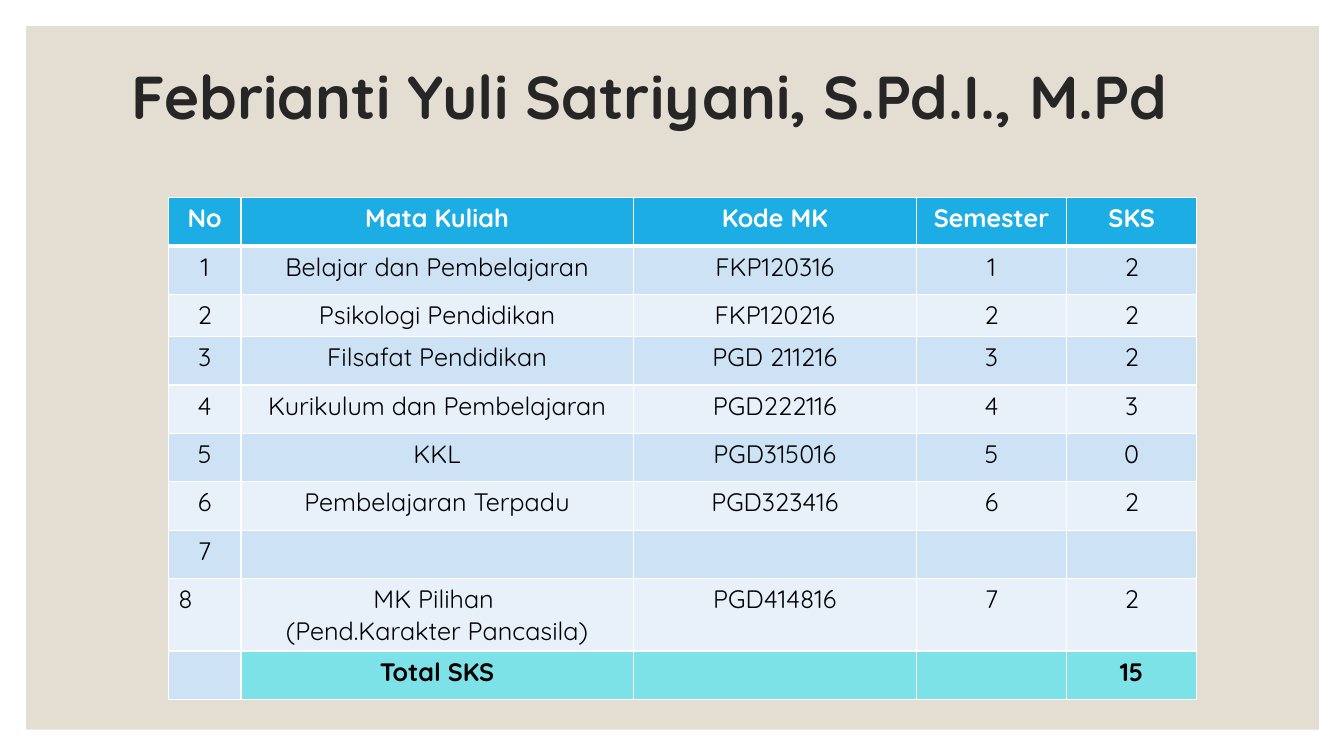
"""Build a slide listing a lecturer's courses with codes, semesters and credits."""
import lxml.etree
import pptx
import pptx.dml.color
import pptx.enum.shapes
import pptx.enum.text
import pptx.oxml.ns
import pptx.util

Inches = pptx.util.Inches
RGBColor = pptx.dml.color.RGBColor
ALIGN = pptx.enum.text.PP_ALIGN

FONT = "Quicksand"
SAND = RGBColor(0xE3, 0xDE, 0xD1)
CHARCOAL = RGBColor(0x26, 0x26, 0x26)
BLACK = RGBColor(0x00, 0x00, 0x00)
WHITE = RGBColor(0xFF, 0xFF, 0xFF)
HEADER_BLUE = RGBColor(0x1C, 0xAD, 0xE4)
BAND_DARK = RGBColor(0xCD, 0xE3, 0xF5)
BAND_LIGHT = RGBColor(0xE8, 0xF1, 0xFA)
TOTAL_TEAL = RGBColor(0x7D, 0xE2, 0xE7)

COURSES = [
    ("No", "Mata Kuliah", "Kode MK", "Semester", "SKS"),
    ("1", "Belajar dan Pembelajaran", "FKP120316", "1", "2"),
    ("2", "Psikologi Pendidikan", "FKP120216", "2", "2"),
    ("3", "Filsafat Pendidikan", "PGD 211216", "3", "2"),
    ("4", "Kurikulum dan Pembelajaran", "PGD222116", "4", "3"),
    ("5", "KKL", "PGD315016", "5", "0"),
    ("6", "Pembelajaran Terpadu", "PGD323416", "6", "2"),
    ("7", "", "", "", ""),
    ("8", "MK Pilihan \n(Pend.Karakter Pancasila)", "PGD414816", "7", "2"),
    ("", "Total SKS", "", "", "15"),
]
COLUMN_WIDTHS = [0.72, 3.89, 2.81, 1.49, 1.29]
ROW_HEIGHTS = [0.48, 0.48, 0.42, 0.48, 0.48, 0.48, 0.48, 0.48, 0.72, 0.48]
TOTAL_ROW = len(COURSES) - 1


def add_text(paragraph, text, size, color, bold, align=ALIGN.CENTER):
    paragraph.alignment = align
    run = paragraph.add_run()
    run.text = text
    run.font.name = FONT
    run.font.size = pptx.util.Pt(size)
    run.font.bold = bold
    run.font.color.rgb = color


def set_borders(cell, top, bottom):
    properties = cell._tc.get_or_add_tcPr()
    sides = [("lnL", 1), ("lnR", 1), ("lnT", top), ("lnB", bottom)]
    for position, (side, points) in enumerate(sides):
        line = lxml.etree.Element(pptx.oxml.ns.qn(f"a:{side}"), w=str(pptx.util.Pt(points)))
        fill = lxml.etree.SubElement(line, pptx.oxml.ns.qn("a:solidFill"))
        lxml.etree.SubElement(fill, pptx.oxml.ns.qn("a:srgbClr"), val=str(WHITE))
        properties.insert(position, line)


deck = pptx.Presentation()
deck.slide_width = Inches(13.33)
deck.slide_height = Inches(7.5)
slide = deck.slides.add_slide(deck.slide_layouts[6])

backdrop = slide.shapes.add_shape(
    pptx.enum.shapes.MSO_SHAPE.RECTANGLE, Inches(0.26), Inches(0.26), Inches(12.82), Inches(6.98))
backdrop.shadow.inherit = False
backdrop.fill.solid()
backdrop.fill.fore_color.rgb = SAND
backdrop.line.fill.background()

lecturer = slide.shapes.add_textbox(Inches(0.94), Inches(0.61), Inches(11), Inches(0.77)).text_frame
lecturer.word_wrap = True
lecturer.vertical_anchor = pptx.enum.text.MSO_ANCHOR.MIDDLE
lecturer.paragraphs[0].line_spacing = 0.9
add_text(lecturer.paragraphs[0], "Febrianti Yuli Satriyani, S.Pd.I., M.Pd", 43.2, CHARCOAL, True)

schedule = slide.shapes.add_table(
    len(COURSES), len(COLUMN_WIDTHS), Inches(1.67), Inches(1.96),
    Inches(sum(COLUMN_WIDTHS)), Inches(sum(ROW_HEIGHTS))).table
for column, width in zip(schedule.columns, COLUMN_WIDTHS):
    column.width = Inches(width)
for row, height in zip(schedule.rows, ROW_HEIGHTS):
    row.height = Inches(height)

for row_index, course in enumerate(COURSES):
    is_header = row_index == 0
    is_total = row_index == TOTAL_ROW
    for column_index, entry in enumerate(course):
        cell = schedule.cell(row_index, column_index)
        cell.fill.solid()
        if is_header:
            cell.fill.fore_color.rgb = HEADER_BLUE
        elif is_total and column_index > 0:
            cell.fill.fore_color.rgb = TOTAL_TEAL
        else:
            cell.fill.fore_color.rgb = BAND_DARK if row_index % 2 else BAND_LIGHT
        set_borders(cell, 3 if row_index == 1 else 1, 3 if is_header else 1)
        if not entry:
            continue
        for line_index, line_text in enumerate(entry.split("\n")):
            frame = cell.text_frame
            paragraph = frame.add_paragraph() if line_index else frame.paragraphs[0]
            add_text(paragraph, line_text, 18, WHITE if is_header else BLACK, is_header or is_total,
                     ALIGN.LEFT if entry == "8" else ALIGN.CENTER)

deck.save("out.pptx")
